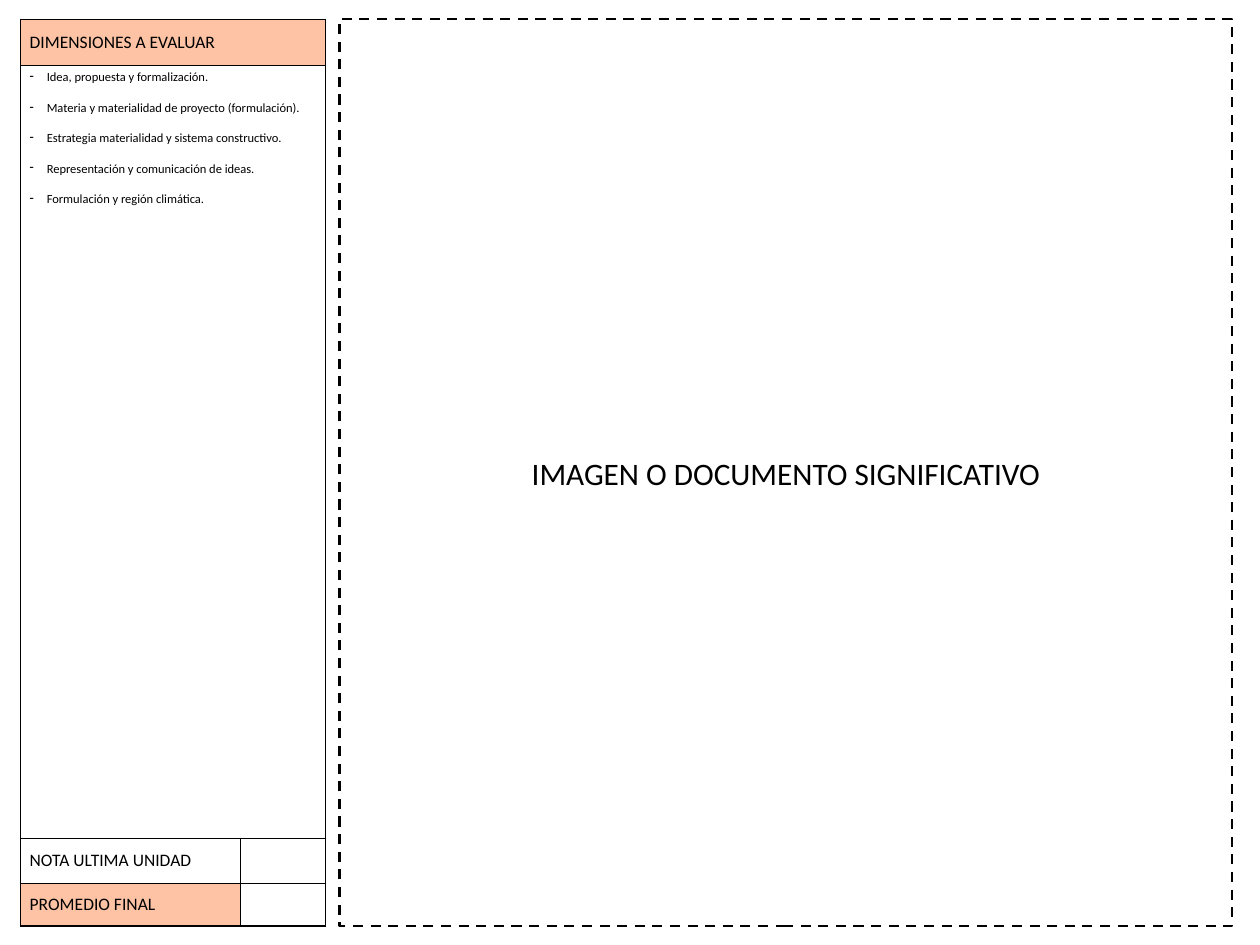
from pptx import Presentation
from pptx.dml.color import RGBColor
from pptx.enum.dml import MSO_LINE
from pptx.enum.shapes import MSO_SHAPE
from pptx.enum.text import MSO_ANCHOR, PP_ALIGN
from pptx.util import Inches, Pt
from lxml.etree import SubElement
from pptx.oxml.ns import qn

BLACK, PEACH, WHITE = "000000", "FDC3A4", "FFFFFF"


def color(value):
    return RGBColor.from_string(value)


def style(paragraph, size):
    for span in paragraph.runs:
        span.font.size = Pt(size)
        span.font.name = "Calibri"
        span.font.color.rgb = color(BLACK)


deck = Presentation()
deck.slide_width, deck.slide_height = Inches(14), Inches(10.5)
page = deck.slides.add_slide(deck.slide_layouts[6])

# Dashed frame for the main document
frame = page.shapes.add_shape(MSO_SHAPE.RECTANGLE, Inches(3.77), Inches(0.21), Inches(9.92), Inches(10.08))
frame.shadow.inherit = False
frame.fill.background()
frame.line.color.rgb = color(BLACK)
frame.line.width = Pt(2)
frame.line.dash_style = MSO_LINE.DASH
frame.text_frame.text = "IMAGEN O DOCUMENTO SIGNIFICATIVO"
frame.text_frame.vertical_anchor = MSO_ANCHOR.MIDDLE
frame.text_frame.paragraphs[0].alignment = PP_ALIGN.CENTER
style(frame.text_frame.paragraphs[0], 25)

# Evaluation table
table = page.shapes.add_table(4, 2, Inches(0.23), Inches(0.21), Inches(3.39), Inches(10.08)).table
table.first_row = table.horz_banding = False
for column, width in zip(table.columns, [2.44, 0.95]):
    column.width = Inches(width)
for row, height in zip(table.rows, [0.52, 8.59, 0.49, 0.48]):
    row.height = Inches(height)

# Borders: left, right, top, bottom in points
wide = (1, 1, 1, 1)
borders = [
    [(1, 1, 0.5, 1)] * 2,
    [wide] * 2,
    [(1, 0.5, 1, 0.5), (0.5, 1, 1, 0.5)],
    [(1, 0.5, 0.5, 1), (0.5, 1, 0.5, 1)],
]
fills = [[PEACH, PEACH], [None, None], [WHITE, None], [PEACH, None]]
for row_index in range(4):
    for column_index in range(2):
        cell = table.cell(row_index, column_index)
        properties = cell._tc.get_or_add_tcPr()
        for side, width in zip("LRTB", borders[row_index][column_index]):
            line = SubElement(properties, qn(f"a:ln{side}"), w=str(Pt(width)))
            solid = SubElement(line, qn("a:solidFill"))
            SubElement(solid, qn("a:srgbClr"), val=BLACK)
        fill = fills[row_index][column_index]
        if fill:
            cell.fill.solid()
            cell.fill.fore_color.rgb = color(fill)
        else:
            cell.fill.background()
for row_index in (0, 1):
    table.cell(row_index, 0).merge(table.cell(row_index, 1))

# Headings
for row_index, heading in [(0, "DIMENSIONES A EVALUAR"), (2, "NOTA ULTIMA UNIDAD"), (3, "PROMEDIO FINAL")]:
    cell = table.cell(row_index, 0)
    cell.text_frame.text = heading
    cell.vertical_anchor = MSO_ANCHOR.MIDDLE
    style(cell.text_frame.paragraphs[0], 14)

# Dimensions as a dashed list
dimensions = [
    "Idea, propuesta y formalización.",
    "Materia y materialidad de proyecto (formulación).",
    "Estrategia materialidad y sistema constructivo.",
    "Representación y comunicación de ideas.",
    "Formulación y región climática.",
]
content = table.cell(1, 0).text_frame
content.text = "\n".join(dimensions)
for paragraph in content.paragraphs:
    paragraph.alignment = PP_ALIGN.JUSTIFY
    paragraph.space_after = Pt(12.2)
    indent = paragraph._p.get_or_add_pPr()
    indent.set("marL", str(Inches(0.19)))
    indent.set("indent", str(Inches(-0.19)))
    SubElement(indent, qn("a:buChar"), char="-")
    style(paragraph, 10)

deck.save("out.pptx")
